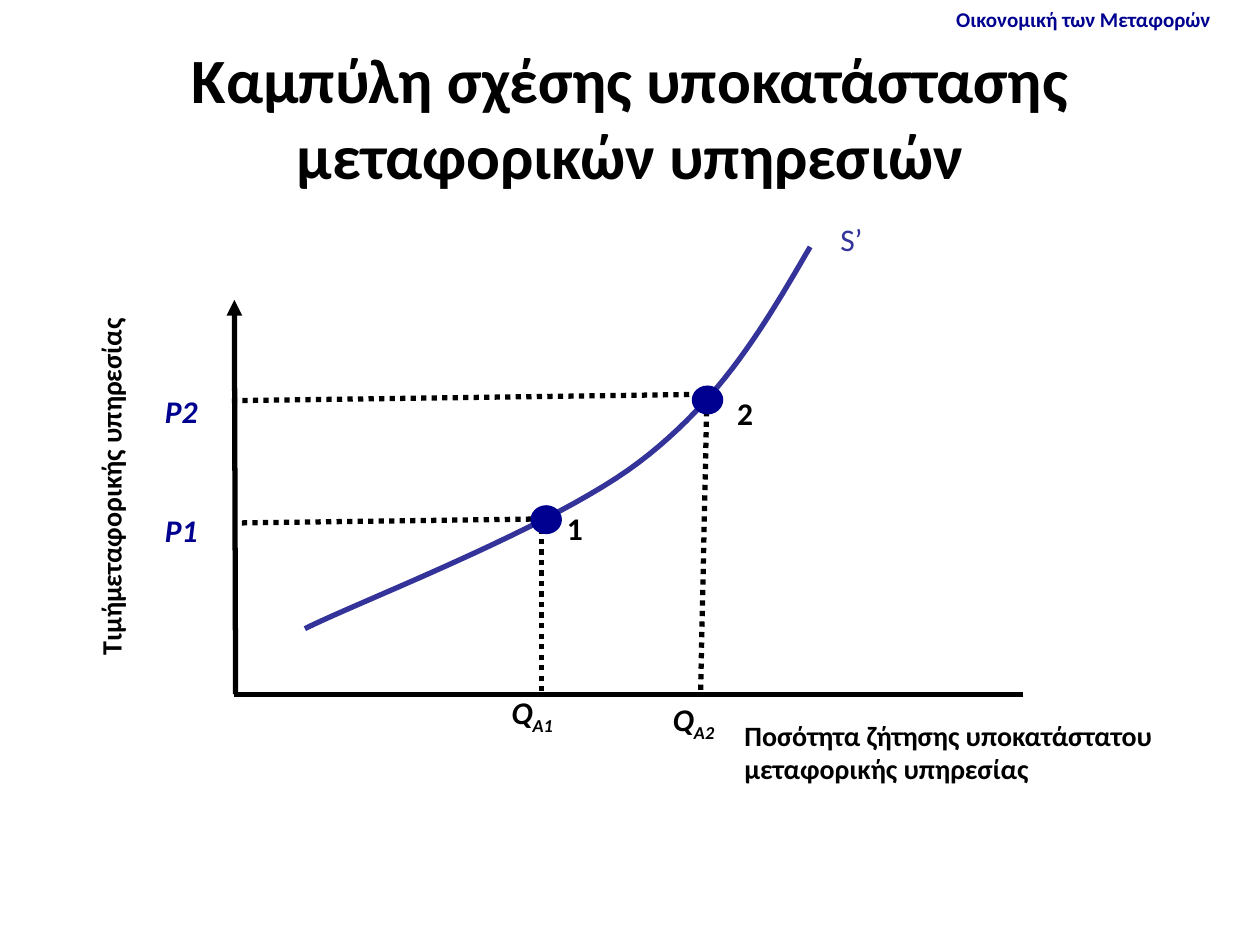
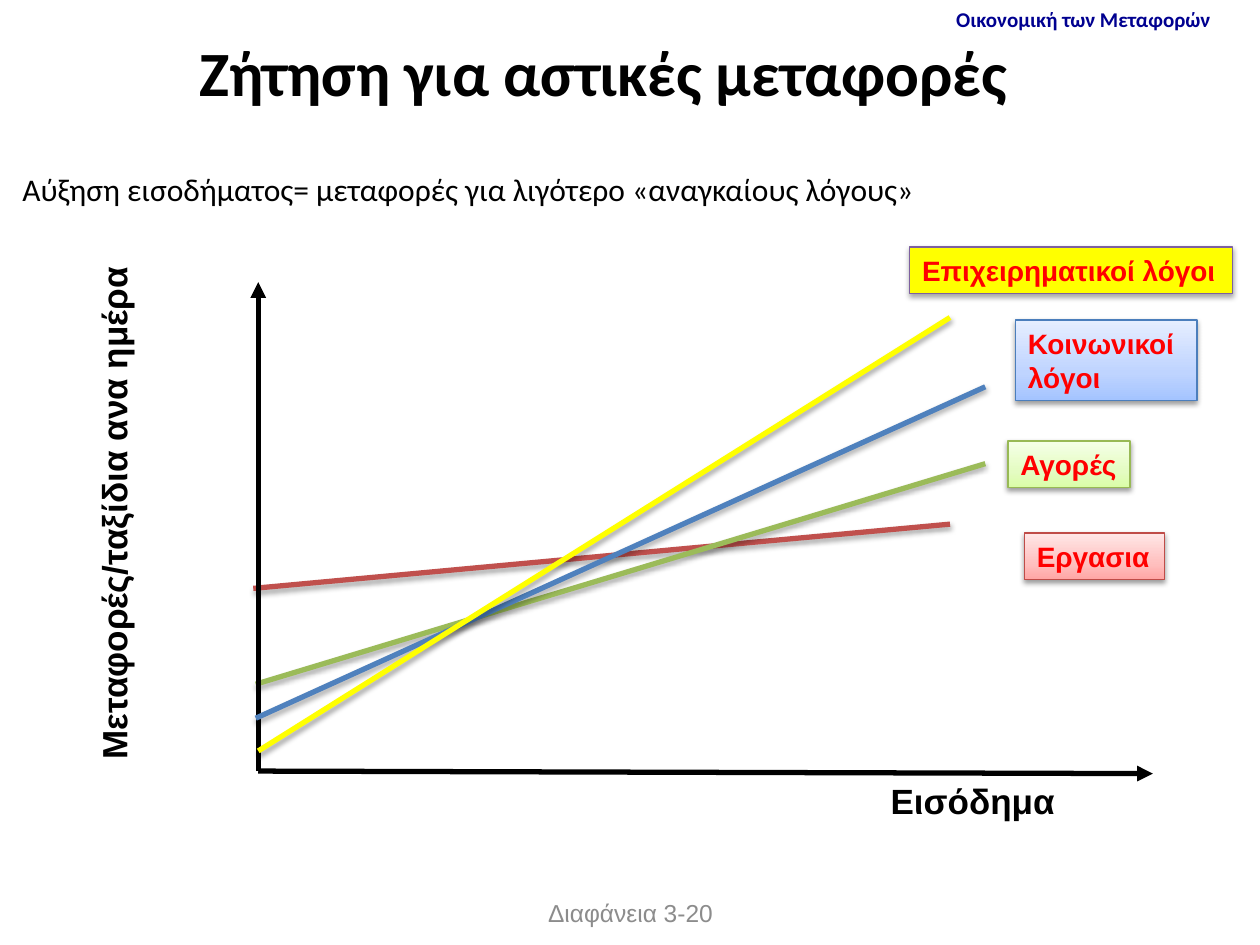
from dataclasses import dataclass
from typing import NamedTuple

from lxml import etree
from pptx import Presentation
from pptx.dml.color import RGBColor
from pptx.enum.dml import MSO_LINE
from pptx.enum.shapes import MSO_CONNECTOR, MSO_SHAPE
from pptx.enum.text import MSO_ANCHOR, MSO_AUTO_SIZE, PP_ALIGN
from pptx.oxml.ns import qn
from pptx.util import Inches, Pt

CENTER, LEFT = PP_ALIGN.CENTER, PP_ALIGN.LEFT
MIDDLE = MSO_ANCHOR.MIDDLE
DOTTED = MSO_LINE.ROUND_DOT
STRAIGHT = MSO_CONNECTOR.STRAIGHT
FIT_SHAPE = MSO_AUTO_SIZE.SHAPE_TO_FIT_TEXT
RECTANGLE, OVAL = MSO_SHAPE.RECTANGLE, MSO_SHAPE.OVAL
TITLE_ONLY = 5


@dataclass(frozen=True)
class Theme:
    body: str = "Calibri"
    plain: str = "Arial"
    black: str = "000000"
    navy: str = "000090"
    curve: str = "333399"
    grey: str = "8C8C8C"
    label: str = "FF0000"
    red: str = "C0504D"
    green: str = "9BBB59"
    blue: str = "4F81BD"
    yellow: str = "FFFF00"
    title_size: float = 36
    axis_size: float = 20
    text_size: float = 18
    label_size: float = 16
    footer_size: float = 14
    header_size: float = 12
    line_width: float = 3
    border_width: float = 0.75


T = Theme()


class Point(NamedTuple):
    x: float
    y: float


class Box(NamedTuple):
    x: float
    y: float
    w: float
    h: float


class Shadow(NamedTuple):
    alpha: int
    blur: float
    distance: float


LINE_SHADOW = Shadow(35, 3.1, 1.8)
LABEL_SHADOW = Shadow(38, 3.1, 1.6)


@dataclass(frozen=True)
class Line:
    start: Point
    end: Point
    color: str = T.black
    dotted: bool = False
    arrow: bool = False
    shadow: Shadow | None = None


@dataclass(frozen=True)
class Text:
    text: str
    box: Box
    size: float = T.text_size
    font: str = T.body
    color: str = T.black
    bold: bool = True
    italic: bool = False
    subscript: str = ""
    align: PP_ALIGN = LEFT
    wrap: bool = True
    tight: bool = False
    rotation: int = 0


@dataclass(frozen=True)
class Label:
    """A coloured box; several fills form a gradient from bottom to top."""
    text: Text
    fills: tuple[str, ...]
    border: str
    shadow: Shadow


def rgb(color: str) -> RGBColor:
    return RGBColor.from_string(color)


def inches(values) -> list:
    return [Inches(v) for v in values]


def set_effects(shape, shadow: Shadow | None) -> None:
    """Replace the theme's shadow with the given one, or with none."""
    sp_pr = shape.element.spPr
    for old in sp_pr.findall(qn("a:effectLst")):
        sp_pr.remove(old)
    effects = etree.SubElement(sp_pr, qn("a:effectLst"))
    if shadow:
        outer = etree.SubElement(
            effects, qn("a:outerShdw"), blurRad=str(Pt(shadow.blur)),
            dist=str(Pt(shadow.distance)), dir="5400000", rotWithShape="0")
        color = etree.SubElement(outer, qn("a:srgbClr"), val=T.black)
        etree.SubElement(color, qn("a:alpha"), val=str(shadow.alpha * 1000))


def add_line(s, line: Line) -> None:
    c = s.shapes.add_connector(STRAIGHT, *inches(line.start + line.end))
    c.line.color.rgb = rgb(line.color)
    c.line.width = Pt(T.line_width)
    if line.dotted:
        c.line.dash_style = DOTTED
    if line.arrow:
        etree.SubElement(c.element.spPr.find(qn("a:ln")), qn("a:tailEnd"),
                         type="triangle")
    set_effects(c, line.shadow)


def write(shape, text: Text) -> None:
    tf = shape.text_frame
    tf.word_wrap = text.wrap
    tf.auto_size = FIT_SHAPE
    if text.tight:
        tf.margin_left = tf.margin_right = Inches(0.04)
        tf.margin_top = tf.margin_bottom = 0
    p = tf.paragraphs[0]
    p.alignment = text.align
    p.add_run().text = text.text
    if text.subscript:
        r = p.add_run()
        r.text = text.subscript
        r.font._element.set("baseline", "-25000")
    p.font.name, p.font.size = text.font, Pt(text.size)
    p.font.bold, p.font.italic = text.bold, text.italic
    p.font.color.rgb = rgb(text.color)


def add_text(s, text: Text) -> None:
    box = s.shapes.add_textbox(*inches(text.box))
    box.rotation = text.rotation
    write(box, text)


def add_label(s, label: Label) -> None:
    sp = s.shapes.add_shape(RECTANGLE, *inches(label.text.box))
    if len(label.fills) == 1:
        sp.fill.solid()
        sp.fill.fore_color.rgb = rgb(label.fills[0])
    else:
        sp.fill.gradient()
        sp.fill.gradient_angle = 90
        stops = next(sp.element.spPr.iter(qn("a:gsLst")))
        for old in list(stops):
            stops.remove(old)
        for position, color in zip((0, 35, 100), label.fills):
            stop = etree.SubElement(stops, qn("a:gs"), pos=str(position * 1000))
            etree.SubElement(stop, qn("a:srgbClr"), val=color)
    sp.line.color.rgb = rgb(label.border)
    sp.line.width = Pt(T.border_width)
    set_effects(sp, label.shadow)
    write(sp, label.text)


def add_dot(s, box: Box) -> None:
    dot = s.shapes.add_shape(OVAL, *inches(box))
    dot.shadow.inherit = False
    dot.fill.solid()
    dot.fill.fore_color.rgb = rgb(T.navy)
    dot.line.fill.background()


def bezier(a: Point, b: Point, c: Point, d: Point, steps: int = 24) -> list[Point]:
    """Points after a on the cubic curve from a to d."""
    def at(t: float, axis: int) -> float:
        u = 1 - t
        return (u**3 * a[axis] + 3 * u * u * t * b[axis]
                + 3 * u * t * t * c[axis] + t**3 * d[axis])
    return [Point(at(i / steps, 0), at(i / steps, 1)) for i in range(1, steps + 1)]


def add_supply_curve(s) -> None:
    top, bend, bottom = Point(6.43, 1.96), Point(5.07, 3.67), Point(2.42, 4.99)
    points = (bezier(top, Point(6.08, 2.56), Point(5.73, 3.17), bend)
              + bezier(bend, Point(4.4, 4.18), Point(2.86, 4.77), bottom))
    builder = s.shapes.build_freeform(*inches(top))
    builder.add_line_segments([inches(point) for point in points], close=False)
    curve = builder.convert_to_shape()
    curve.shadow.inherit = False
    curve.fill.background()
    curve.line.color.rgb = rgb(T.curve)
    curve.line.width = Pt(T.line_width)


def new_slide(prs, title: str, box: Box):
    s = prs.slides.add_slide(prs.slide_layouts[TITLE_ONLY])
    add_text(s, Text("Οικονομική των Μεταφορών", Box(7.49, 0, 2.25, 0.3),
                     T.header_size, color=T.navy, wrap=False))
    sp = s.shapes.title
    sp.left, sp.top, sp.width, sp.height = inches(box)
    tf = sp.text_frame
    tf.text = title
    tf.vertical_anchor = MIDDLE
    p = tf.paragraphs[0]
    p.alignment = CENTER
    p.font.name, p.font.size, p.font.bold = T.body, Pt(T.title_size), True
    p.font.color.rgb = rgb(T.black)
    return s


def substitution_slide(prs) -> None:
    s = new_slide(prs, "Καμπύλη σχέσης υποκατάστασης μεταφορικών υπηρεσιών",
                  Box(0.5, 0.3, 9, 1.25))
    add_supply_curve(s)
    origin = Point(1.87, 5.51)
    for line in (
        Line(origin, Point(1.86, 2.38), arrow=True),
        Line(Point(8.12, 5.51), Point(1.86, 5.51)),
        Line(Point(1.92, 4.15), Point(4.22, 4.12), dotted=True),
        Line(Point(4.3, 4.11), Point(4.3, 5.51), dotted=True),
        Line(Point(1.84, 3.18), Point(5.56, 3.13), dotted=True),
        Line(Point(5.61, 3.18), Point(5.56, 5.51), dotted=True),
    ):
        add_line(s, line)
    for x, y in ((4.21, 4.01), (5.49, 3.06)):
        add_dot(s, Box(x, y, 0.25, 0.23))
    for name, x, y in (("1", 4.46, 4.04), ("2", 5.81, 3.13)):
        add_text(s, Text(name, Box(x, y, 0.17, 0.3), wrap=False, tight=True))
    for name, y in (("P1", 4.01), ("P2", 3.06)):
        add_text(s, Text(name, Box(1.21, y, 0.71, 0.4), color=T.navy, italic=True))
    for index, x, y in (("Α1", 3.96, 5.45), ("Α2", 5.24, 5.51)):
        add_text(s, Text("Q", Box(x, y, 0.75, 0.4), italic=True, subscript=index))
    add_text(s, Text("S’", Box(6.63, 1.75, 0.38, 0.4), color=T.curve, bold=False,
                     tight=True))
    add_text(s, Text("Τιμήμεταφορικής υπηρεσίας", Box(-1.23, 3.68, 4.22, 0.37),
                     T.label_size, align=CENTER, rotation=270))
    add_text(s, Text("Ποσότητα ζήτησης υποκατάστατου μεταφορικής υπηρεσίας",
                     Box(5.81, 5.65, 3.98, 0.64), T.label_size))


def demand_slide(prs) -> None:
    s = new_slide(prs, "Ζήτηση για αστικές μεταφορές", Box(0.08, 0, 9.42, 1.13))
    origin = Point(2.05, 6.12)
    for line in (
        Line(Point(7.54, 4.16), Point(2.01, 4.67), T.red, shadow=LINE_SHADOW),
        Line(Point(7.82, 3.68), Point(2.03, 5.43), T.green, shadow=LINE_SHADOW),
        Line(origin, Point(2.05, 2.24), arrow=True),
        Line(origin, Point(9.15, 6.14), arrow=True),
        Line(Point(7.82, 3.07), Point(2.03, 5.7), T.blue, shadow=LINE_SHADOW),
        Line(Point(7.54, 2.52), Point(2.05, 5.96), T.yellow, shadow=LINE_SHADOW),
    ):
        add_line(s, line)
    for name, box, wrap, fills, border, shadow in (
        ("Επιχειρηματικοί λόγοι", Box(7.22, 1.96, 2.56, 0.37), False,
         (T.yellow,), "7D60A0", LINE_SHADOW),
        ("Κοινωνικοί λόγοι", Box(8.06, 2.54, 1.44, 0.64), True,
         ("A4C4FF", "BFD4FF", "E6EEFF"), "4B7EBC", LABEL_SHADOW),
        ("Αγορές", Box(8, 3.5, 0.97, 0.37), False,
         ("DAFDA7", "E4FCC2", "F5FFE7"), "98B955", LABEL_SHADOW),
        ("Εργασια", Box(8.13, 4.23, 1.11, 0.37), False,
         ("FFA6A5", "FFC0BF", "FFE7E7"), "BF4C48", LABEL_SHADOW),
    ):
        text = Text(name, box, T.label_size, T.plain, T.label, wrap=wrap)
        add_label(s, Label(text, fills, border, shadow))
    add_text(s, Text("Eισόδημα", Box(6.97, 6.14, 1.52, 0.44), T.axis_size, T.plain,
                     wrap=False))
    add_text(s, Text("Μεταφορές/ταξίδια ανα ημέρα", Box(-1.46, 3.54, 4.73, 0.44),
                     T.axis_size, T.plain, rotation=270))
    add_text(s, Text("Αύξηση εισοδήματος= μεταφορές για λιγότερο «αναγκαίους λόγους»",
                     Box(0.08, 1.3, 7.37, 0.4), bold=False, wrap=False))
    add_text(s, Text("Διαφάνεια 3-20", Box(3.42, 7.08, 3.17, 0.34), T.footer_size,
                     T.plain, T.grey, bold=False, align=CENTER))


def main() -> None:
    prs = Presentation()
    prs.slide_width, prs.slide_height = Inches(10), Inches(7.5)
    substitution_slide(prs)
    demand_slide(prs)
    prs.save("out.pptx")


if __name__ == "__main__":
    main()
